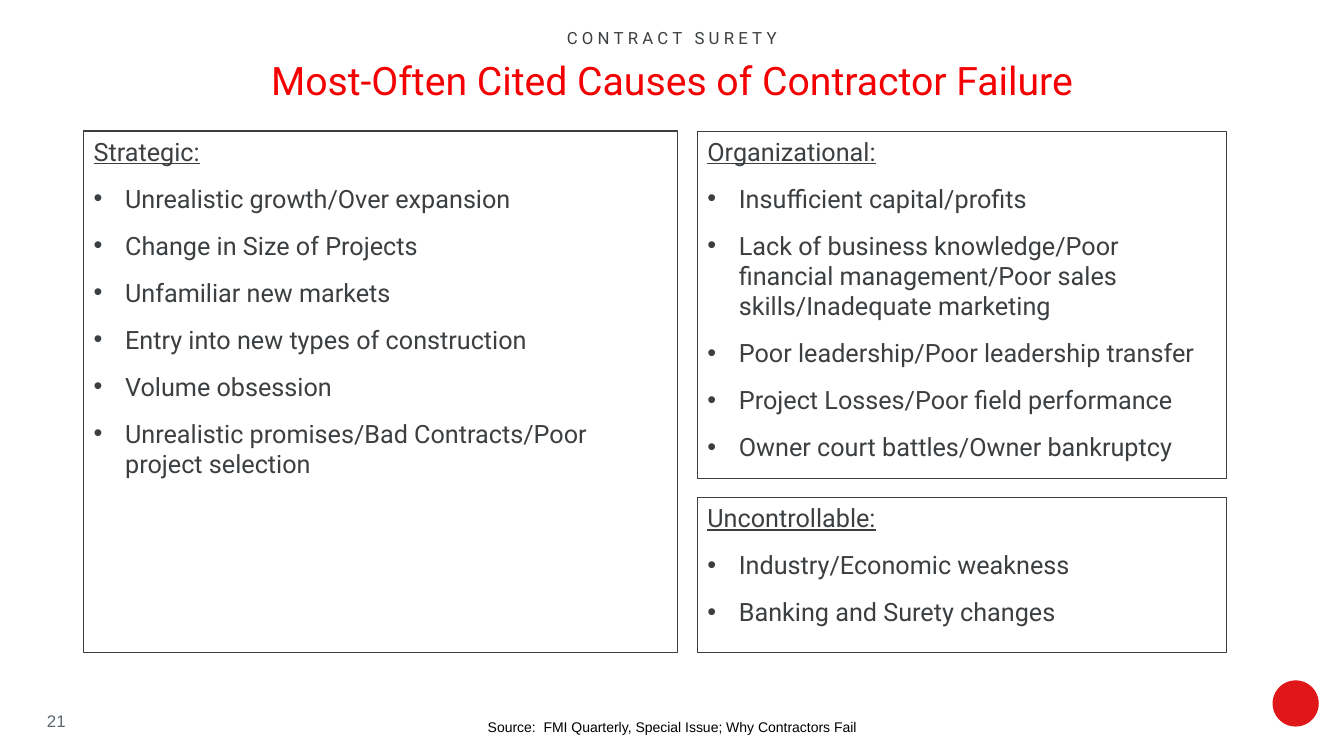
"""Build the slide on the most-often cited causes of contractor failure."""
from lxml import etree
from pptx import Presentation, util as u
from pptx.dml import color
from pptx.enum import shapes, text
from pptx.oxml import ns

INK, RED = "3C3F41", "F50002"
INDENT = 22.5


def rgb(code):
    return color.RGBColor.from_string(code)


def write(paragraph, words, ink, **format_values):
    run = paragraph.add_run()
    run.text = words
    run.font.color.rgb = rgb(ink)
    for attribute, value in format_values.items():
        setattr(run.font, attribute, value)
    return run


deck = Presentation()
deck.slide_width, deck.slide_height = u.Pt(960), u.Pt(540)
slide = deck.slides.add_slide(deck.slide_layouts[6])

CENTER, RIGHT = text.PP_ALIGN.CENTER, text.PP_ALIGN.RIGHT
TOP, MIDDLE = text.MSO_ANCHOR.TOP, text.MSO_ANCHOR.MIDDLE
captions = [
    ("Most-Often Cited Causes of Contractor Failure",
     (36, 36.7, 888, 35.3), CENTER, TOP, 3.6, RED, "Roboto", 28, 0),
    ("CONTRACT SURETY",
     (102, 16.6, 756, 21.6), CENTER, TOP, 3.6, INK, "Roboto", 12, 300),
    ("21",
     (18, 500.4, 36, 28.8), RIGHT, MIDDLE, 3.6, "5B6770", "Arial", 12, 0),
    ("Source:  FMI Quarterly, Special Issue; Why Contractors Fail",
     (306, 511.2, 348, 28.8), CENTER, TOP, 2, "000000", "Arial", 10, 0),
]
for words, place, align, anchor, inset, ink, face, size, spacing in captions:
    frame = slide.shapes.add_textbox(*map(u.Pt, place)).text_frame
    for attribute, value in {"word_wrap": True, "vertical_anchor": anchor,
                             "margin_top": u.Pt(inset)}.items():
        setattr(frame, attribute, value)
    caption = frame.paragraphs[0]
    caption.alignment = align
    run = write(caption, words, ink, name=face, size=u.Pt(size))
    if spacing:
        run.font._element.set("spc", str(spacing))

causes = [
    ("Strategic:", (59.8, 93.6, 424, 372.2), [
        "Unrealistic growth/Over expansion",
        "Change in Size of Projects",
        "Unfamiliar new markets",
        "Entry into new types of construction",
        "Volume obsession",
        "Unrealistic promises/Bad Contracts/Poor project selection",
    ]),
    ("Organizational:", (498.2, 93.6, 378, 248.4), [
        "Insufficient capital/profits",
        "Lack of business knowledge/Poor financial management/"
        "Poor sales skills/Inadequate marketing",
        "Poor leadership/Poor leadership transfer",
        "Project Losses/Poor field performance",
        "Owner court battles/Owner bankruptcy",
    ]),
    ("Uncontrollable:", (498.2, 355.2, 378, 110.6), [
        "Industry/Economic weakness",
        "Banking and Surety changes",
    ]),
]
for heading, place, reasons in causes:
    panel = slide.shapes.add_shape(shapes.MSO_SHAPE.RECTANGLE, *map(u.Pt, place))
    panel.shadow.inherit = False
    panel.fill.background()
    panel.line.color.rgb = rgb(INK)
    panel.line.width = u.Pt(0.75)
    frame = panel.text_frame
    frame.word_wrap = True
    frame.vertical_anchor = TOP
    title = frame.paragraphs[0]
    title.alignment = text.PP_ALIGN.LEFT
    write(title, heading, INK, name="Roboto", size=u.Pt(18), underline=True)
    for reason in reasons:
        item = frame.add_paragraph()
        item.alignment = text.PP_ALIGN.LEFT
        item.space_before = u.Pt(12)
        properties = item._p.get_or_add_pPr()
        properties.set("marL", str(u.Pt(INDENT)))
        properties.set("indent", str(-u.Pt(INDENT)))
        etree.SubElement(properties, ns.qn("a:buFont"), typeface="Arial")
        etree.SubElement(properties, ns.qn("a:buChar"), char="•")
        write(item, reason, INK, name="Roboto", size=u.Pt(18))

emblem = slide.shapes.add_shape(
    shapes.MSO_SHAPE.OVAL, *map(u.Pt, (909, 486, 33, 33)))
emblem.shadow.inherit = False
emblem.fill.solid()
emblem.fill.fore_color.rgb = rgb("E01719")
emblem.line.fill.background()

deck.save("out.pptx")
